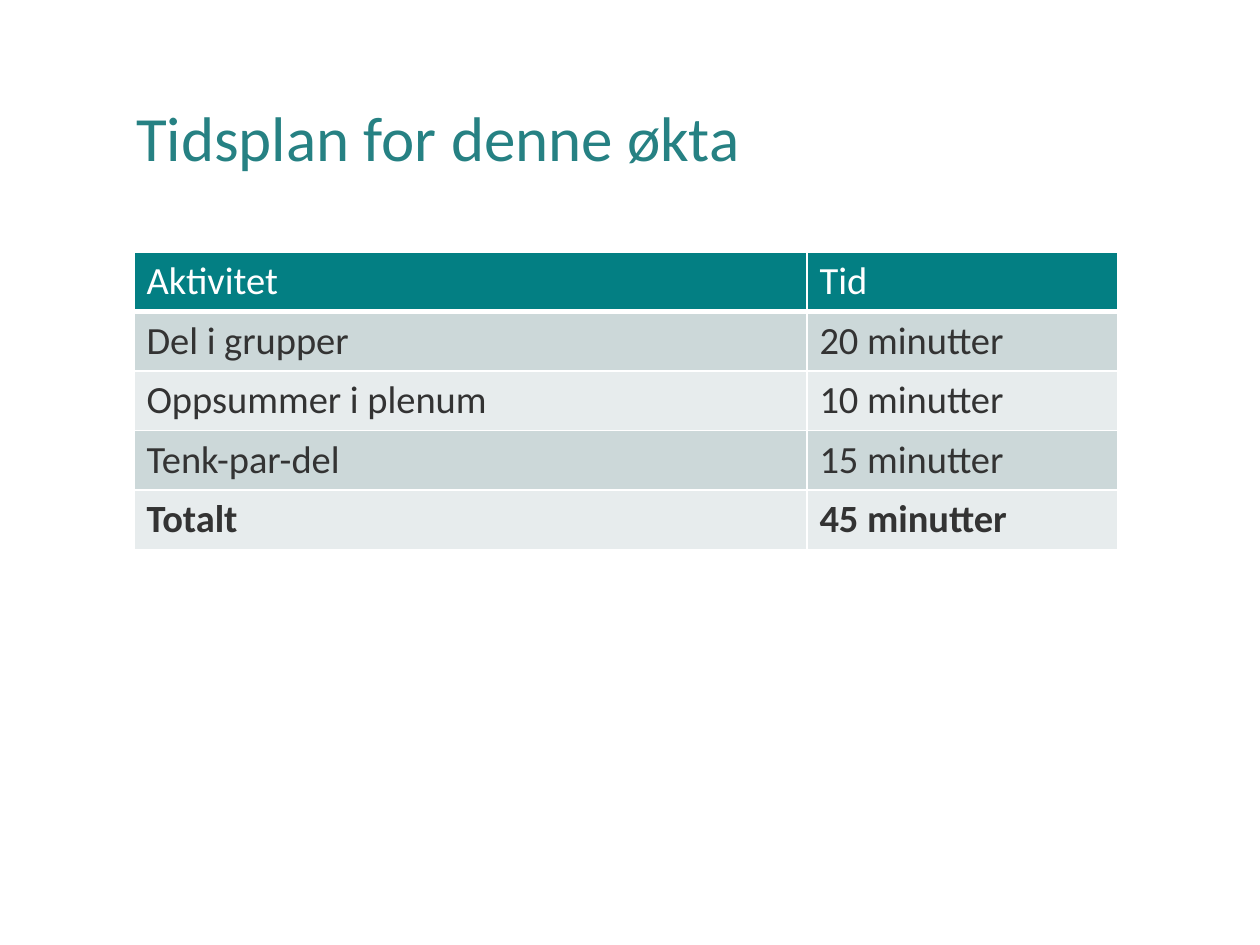
import pptx
import pptx.util
import pptx.dml.color
import pptx.enum.text
import lxml.etree
from pptx.oxml.ns import qn

PX = 914400 / 126
TITLE_TEAL = pptx.dml.color.RGBColor(0x26, 0x81, 0x83)
HEADER_TEAL = pptx.dml.color.RGBColor(0x03, 0x7F, 0x83)
BAND_DARK = pptx.dml.color.RGBColor(0xCC, 0xD8, 0xD9)
BAND_LIGHT = pptx.dml.color.RGBColor(0xE7, 0xEC, 0xED)
WHITE = pptx.dml.color.RGBColor(0xFF, 0xFF, 0xFF)
DARK_GREY = pptx.dml.color.RGBColor(0x33, 0x33, 0x33)


def px(length):
    return pptx.util.Emu(round(length * PX))


def add_border(cell, side, points):
    line = lxml.etree.SubElement(cell._tc.get_or_add_tcPr(), qn(f"a:{side}"))
    line.set("w", str(pptx.util.Pt(points)))
    fill = lxml.etree.SubElement(line, qn("a:solidFill"))
    lxml.etree.SubElement(fill, qn("a:srgbClr")).set("val", str(WHITE))


deck = pptx.Presentation()
deck.slide_width, deck.slide_height = px(1260), px(945)
slide = deck.slides.add_slide(deck.slide_layouts[5])

heading = slide.shapes.title
heading.left, heading.top, heading.width, heading.height = px(123), px(50), px(1045), px(183)
heading_frame = heading.text_frame
heading_frame.text = "Tidsplan for denne økta"
heading_frame.word_wrap = True
heading_frame.vertical_anchor = pptx.enum.text.MSO_ANCHOR.MIDDLE
heading_frame.margin_left = heading_frame.margin_right = px(13)
heading_frame.margin_top = heading_frame.margin_bottom = px(13)
heading_line = heading_frame.paragraphs[0]
heading_line.alignment = pptx.enum.text.PP_ALIGN.LEFT
heading_line.line_spacing = 0.9
heading_line.font.size = pptx.util.Pt(36)
heading_line.font.name = "Calibri"
heading_line.font.color.rgb = TITLE_TEAL

activities = [
    ("Aktivitet", "Tid"),
    ("Del i grupper", "20 minutter"),
    ("Oppsummer i plenum", "10 minutter"),
    ("Tenk-par-del", "15 minutter"),
    ("Totalt", "45 minutter"),
]
column_widths = [673, 311]
row_height = 59

schedule = slide.shapes.add_table(
    len(activities), len(column_widths), px(134), px(252),
    px(sum(column_widths)), px(row_height * len(activities)),
).table
for column, width in zip(schedule.columns, column_widths):
    column.width = px(width)

for row_index, activity in enumerate(activities):
    schedule.rows[row_index].height = px(row_height)
    is_header = row_index == 0
    is_total = row_index == len(activities) - 1
    band = BAND_DARK if row_index % 2 else BAND_LIGHT
    for column_index, wording in enumerate(activity):
        cell = schedule.cell(row_index, column_index)
        cell.text = wording
        for side in ("lnL", "lnR", "lnT", "lnB"):
            thick = is_header and side == "lnB" or row_index == 1 and side == "lnT"
            add_border(cell, side, 3 if thick else 1)
        cell.fill.solid()
        cell.fill.fore_color.rgb = HEADER_TEAL if is_header else band
        font = cell.text_frame.paragraphs[0].runs[0].font
        font.name = "Calibri"
        font.size = pptx.util.Pt(22)
        font.bold = is_total
        font.color.rgb = WHITE if is_header else DARK_GREY

deck.save("out.pptx")
